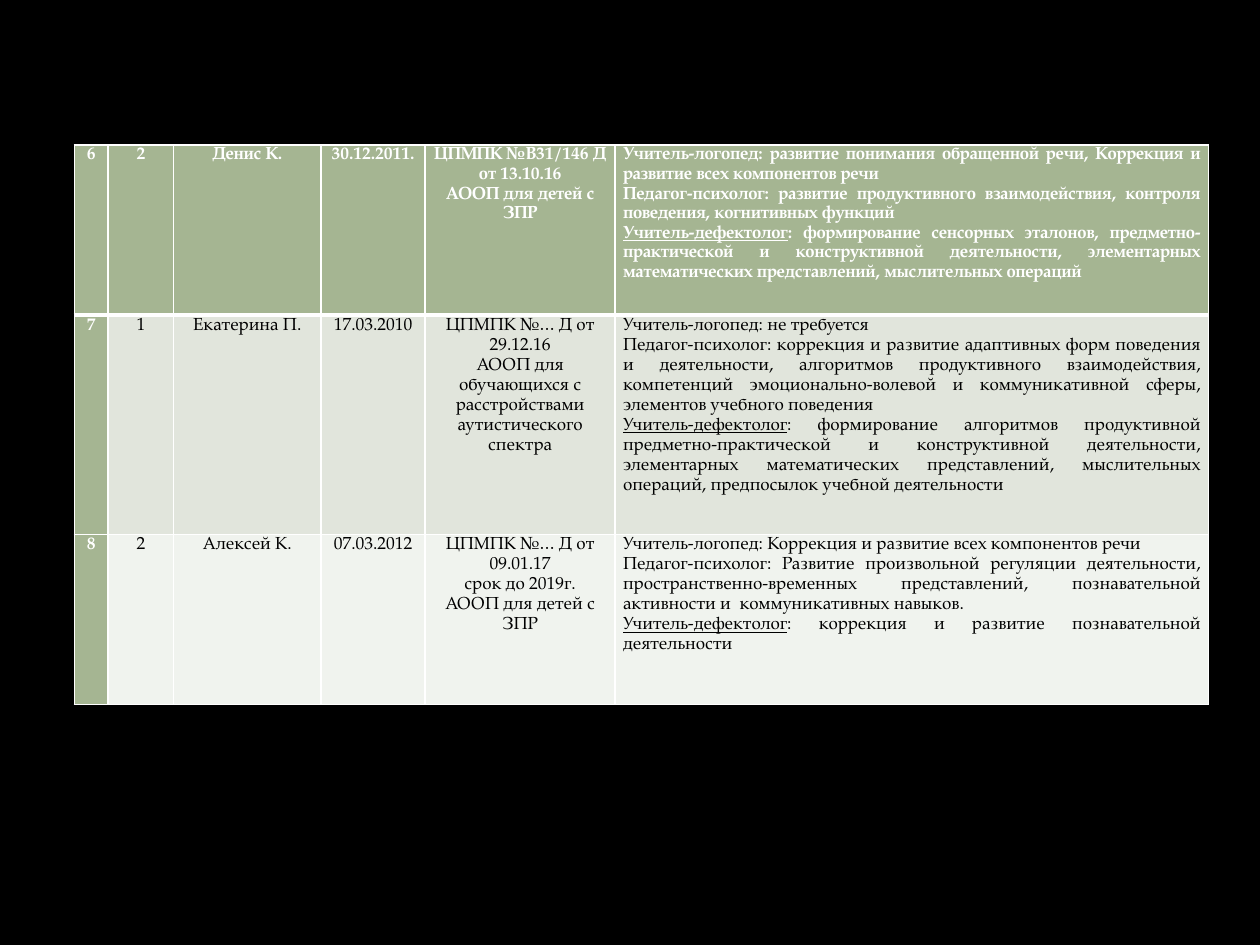
from dataclasses import dataclass

from lxml import etree
from pptx import Presentation
from pptx.dml.color import RGBColor
from pptx.enum.text import PP_ALIGN
from pptx.oxml.ns import qn
from pptx.slide import Slide
from pptx.table import Table, _Cell
from pptx.util import Cm, Pt

CENTER, JUSTIFY = PP_ALIGN.CENTER, PP_ALIGN.JUSTIFY
BLANK_LAYOUT = 6
UNDERLINED = "Учитель-дефектолог"


@dataclass(frozen=True)
class Theme:
    background: str = "000000"
    accent: str = "A5B592"
    band_dark: str = "E1E5DC"
    band_light: str = "F0F3EE"
    light_text: str = "FFFFFF"
    dark_text: str = "000000"
    border: str = "FFFFFF"
    font: str = "TeX Gyre Pagella"
    size: float = 10
    line_spacing: float = 1.15
    thin: float = 1
    thick: float = 3


@dataclass(frozen=True)
class Pupil:
    number: str
    grade: str
    name: str
    birth_date: str
    conclusion: tuple[str, ...]
    support: tuple[str, ...]
    fill: str
    height: float

    def columns(self) -> list[tuple[str, ...]]:
        return [(self.number,), (self.grade,), (self.name,), (self.birth_date,),
                self.conclusion, self.support]


THEME = Theme()
COLUMN_WIDTHS = (0.68, 1.32, 2.97, 2.1, 3.83, 11.96)
PUPILS = (
    Pupil(
        "6", "2", "Денис К.", "30.12.2011.",
        ("ЦПМПК №В31/146 Д от 13.10.16", "АООП для детей с ЗПР"),
        ("Учитель-логопед: развитие понимания обращенной речи, Коррекция и "
         "развитие всех компонентов речи",
         "Педагог-психолог: развитие продуктивного взаимодействия, контроля "
         "поведения, когнитивных функций",
         "Учитель-дефектолог: формирование сенсорных эталонов, "
         "предметно-практической и конструктивной деятельности, элементарных "
         "математических представлений, мыслительных операций"),
        THEME.accent, 3.43),
    Pupil(
        "7", "1", "Екатерина П.", "17.03.2010",
        ("ЦПМПК №… Д от 29.12.16",
         "АООП для обучающихся с расстройствами аутистического спектра"),
        ("Учитель-логопед: не требуется",
         "Педагог-психолог: коррекция и развитие адаптивных форм поведения и "
         "деятельности, алгоритмов продуктивного взаимодействия, компетенций "
         "эмоционально-волевой и коммуникативной сферы, элементов учебного "
         "поведения",
         "Учитель-дефектолог: формирование алгоритмов продуктивной "
         "предметно-практической и конструктивной деятельности, элементарных "
         "математических представлений, мыслительных операций, предпосылок "
         "учебной деятельности"),
        THEME.band_dark, 4.42),
    Pupil(
        "8", "2", "Алексей К.", "07.03.2012",
        ("ЦПМПК №… Д от 09.01.17", "срок до 2019г.", "АООП для детей с ЗПР"),
        ("Учитель-логопед: Коррекция и развитие всех компонентов речи",
         "Педагог-психолог: Развитие произвольной регуляции деятельности, "
         "пространственно-временных представлений, познавательной активности "
         "и  коммуникативных навыков.",
         "Учитель-дефектолог: коррекция и развитие познавательной деятельности"),
        THEME.band_light, 3.43),
)


def set_borders(cell: _Cell, top: float, bottom: float) -> None:
    """Draw all four cell borders; the sides are always thin."""
    widths = {"a:lnL": THEME.thin, "a:lnR": THEME.thin, "a:lnT": top, "a:lnB": bottom}
    properties = cell._tc.get_or_add_tcPr()
    for position, (tag, width) in enumerate(widths.items()):
        line = etree.Element(qn(tag), w=str(Pt(width)))
        fill = etree.SubElement(line, qn("a:solidFill"))
        etree.SubElement(fill, qn("a:srgbClr"), val=THEME.border)
        properties.insert(position, line)


def write_cell(cell: _Cell, lines: tuple[str, ...], align: PP_ALIGN, emphasized: bool) -> None:
    frame = cell.text_frame
    frame.text = "\n".join(lines)
    for para in frame.paragraphs:
        para.alignment = align
        para.line_spacing = THEME.line_spacing
        if para.text.startswith(UNDERLINED):
            remainder = para.text.removeprefix(UNDERLINED)
            para.text = UNDERLINED
            para.runs[0].font.underline = True
            para.add_run().text = remainder
        for span in para.runs:
            span.font.name = THEME.font
            span.font.size = Pt(THEME.size)
            span.font.bold = emphasized
            color = THEME.light_text if emphasized else THEME.dark_text
            span.font.color.rgb = RGBColor.from_string(color)


def fill_row(table: Table, row: int, pupil: Pupil) -> None:
    table.rows[row].height = Cm(pupil.height)
    for column, lines in enumerate(pupil.columns()):
        cell = table.cell(row, column)
        cell.margin_left = cell.margin_right = Cm(0.16)
        cell.margin_top = cell.margin_bottom = 0
        emphasized = row == 0 or column == 0
        cell.fill.solid()
        fill = THEME.accent if emphasized else pupil.fill
        cell.fill.fore_color.rgb = RGBColor.from_string(fill)
        set_borders(cell,
                    top=THEME.thick if row == 1 else THEME.thin,
                    bottom=THEME.thick if row == 0 else THEME.thin)
        is_last = column == len(COLUMN_WIDTHS) - 1
        write_cell(cell, lines, JUSTIFY if is_last else CENTER, emphasized)


def add_pupil_table(page: Slide) -> None:
    height = sum(pupil.height for pupil in PUPILS)
    table = page.shapes.add_table(
        len(PUPILS), len(COLUMN_WIDTHS),
        Cm(1.5), Cm(2.92), Cm(sum(COLUMN_WIDTHS)), Cm(height)).table
    table.horz_banding = False
    table.first_row = False
    for column, width in zip(table.columns, COLUMN_WIDTHS):
        column.width = Cm(width)
    for row, pupil in enumerate(PUPILS):
        fill_row(table, row, pupil)


def main() -> None:
    deck = Presentation()
    deck.slide_width, deck.slide_height = Cm(25.4), Cm(19.05)
    page = deck.slides.add_slide(deck.slide_layouts[BLANK_LAYOUT])
    page.background.fill.solid()
    page.background.fill.fore_color.rgb = RGBColor.from_string(THEME.background)
    add_pupil_table(page)
    deck.save("out.pptx")


if __name__ == "__main__":
    main()
